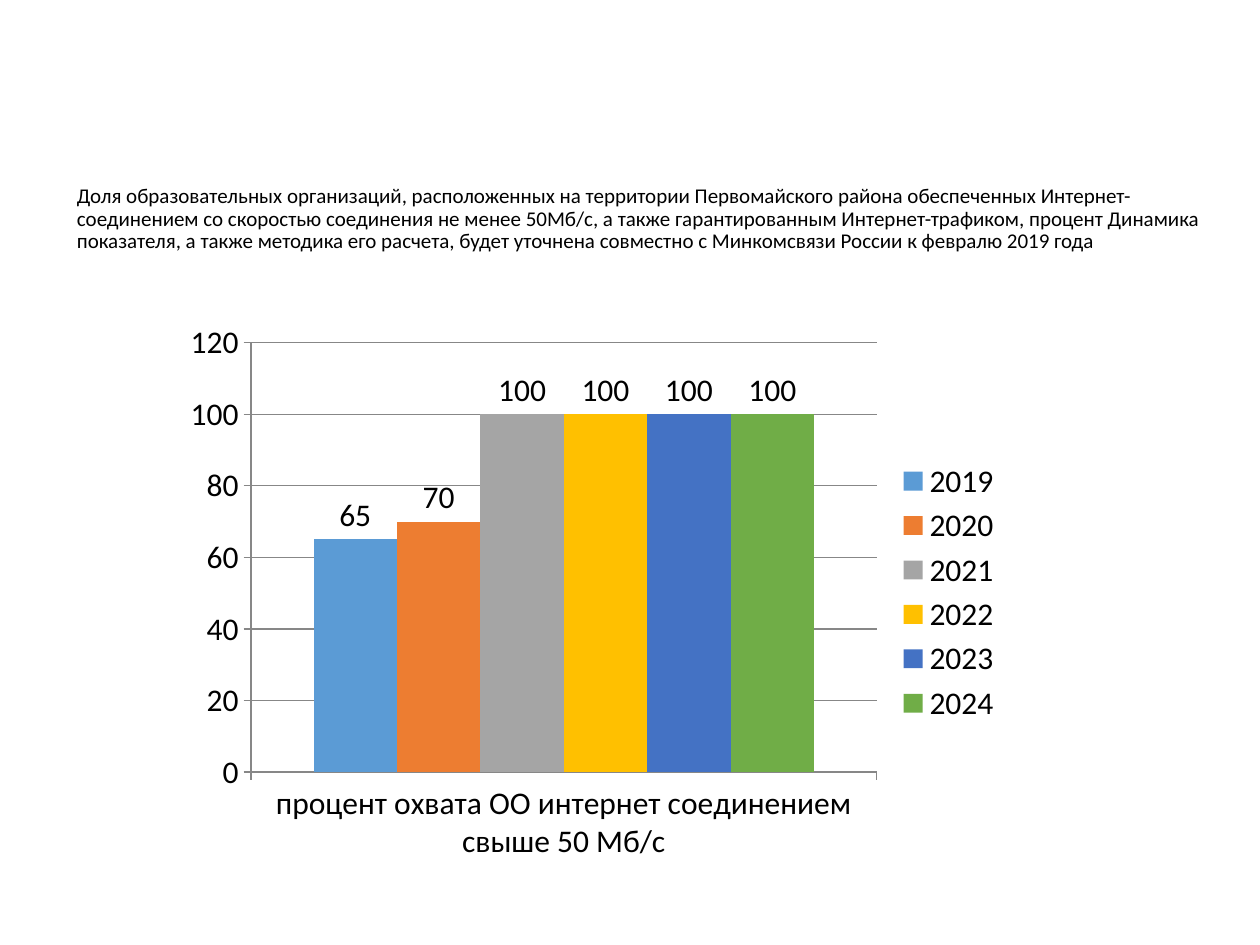
from pptx import Presentation
from pptx.chart.data import CategoryChartData
from pptx.dml.color import RGBColor
from pptx.enum.chart import XL_CHART_TYPE, XL_LABEL_POSITION, XL_LEGEND_POSITION, XL_TICK_MARK
from pptx.enum.text import MSO_ANCHOR, MSO_AUTO_SIZE, PP_ALIGN
from pptx.util import Inches, Pt

COLUMNS = XL_CHART_TYPE.COLUMN_CLUSTERED
OUTSIDE_END = XL_LABEL_POSITION.OUTSIDE_END
LEGEND_RIGHT = XL_LEGEND_POSITION.RIGHT
TICK_OUT = XL_TICK_MARK.OUTSIDE
TOP = MSO_ANCHOR.TOP
NO_FIT = MSO_AUTO_SIZE.NONE
LEFT = PP_ALIGN.LEFT

COLORS = {
    "text": "000000",
    "axis": "878787",
    "2019": "5B9BD5",
    "2020": "ED7D31",
    "2021": "A5A5A5",
    "2022": "FFC000",
    "2023": "4472C4",
    "2024": "70AD47",
}
TITLE = (
    "Доля образовательных организаций, расположенных на территории "
    "Первомайского района обеспеченных Интернет-соединением со скоростью "
    "соединения не менее 50Мб/c, а также гарантированным Интернет-трафиком, "
    "процент Динамика показателя, а также методика его расчета, будет "
    "уточнена совместно с Минкомсвязи России к февралю 2019 года"
)
CATEGORY = "процент охвата ОО интернет соединением свыше 50 Мб/с"
COVERAGE = {"2019": 65, "2020": 70, "2021": 100, "2022": 100, "2023": 100, "2024": 100}


class SlideBuilder:
    def __init__(self, slide, font="Calibri"):
        self.slide = slide
        self.font_name = font

    def color(self, name):
        return RGBColor.from_string(COLORS[name])

    def style_font(self, font, size):
        font.name = self.font_name
        font.size = Pt(size)
        font.bold = False
        font.color.rgb = self.color("text")

    def title(self, text, x, y, w, h, size):
        s = self.slide.shapes.title
        s.left, s.top, s.width, s.height = map(Inches, (x, y, w, h))
        tf = s.text_frame
        tf.text = text
        tf.word_wrap = True
        tf.auto_size = NO_FIT
        tf.vertical_anchor = TOP
        tf.margin_top = Inches(0.1)
        p = tf.paragraphs[0]
        p.alignment = LEFT
        p.line_spacing = 0.9
        self.style_font(p.font, size)

    def column_chart(self, category, values, x, y, w, h, size):
        data = CategoryChartData(number_format="General")
        data.categories = [category]
        for name, value in values.items():
            data.add_series(name, [value])
        frame = self.slide.shapes.add_chart(COLUMNS, *map(Inches, (x, y, w, h)), data)
        chart = frame.chart
        chart.has_title = False
        self.style_font(chart.font, size)
        chart.has_legend = True
        chart.legend.position = LEGEND_RIGHT
        chart.legend.include_in_layout = False

        plot = chart.plots[0]
        plot.gap_width = 150
        plot.overlap = 0
        plot.vary_by_categories = False
        for series in plot.series:
            series.format.fill.solid()
            series.format.fill.fore_color.rgb = self.color(series.name)
            labels = series.data_labels
            labels.show_value = True
            labels.position = OUTSIDE_END
            self.style_font(labels.font, size)

        chart.value_axis.minimum_scale = 0
        chart.value_axis.maximum_scale = 120
        chart.value_axis.major_unit = 20
        chart.value_axis.has_major_gridlines = True
        for axis in (chart.category_axis, chart.value_axis):
            axis.major_tick_mark = TICK_OUT
            self.style_font(axis.tick_labels.font, size)
        for part in (chart.category_axis, chart.value_axis, chart.value_axis.major_gridlines):
            part.format.line.color.rgb = self.color("axis")
            part.format.line.width = Pt(0.75)


def main():
    prs = Presentation()
    prs.slide_width, prs.slide_height = Inches(10), Inches(7.5)
    builder = SlideBuilder(prs.slides.add_slide(prs.slide_layouts[5]))
    builder.title(TITLE, 0.51, 1.37, 9.12, 1.3, size=12)
    builder.column_chart(CATEGORY, COVERAGE, 1.38, 2.48, 6.67, 4.44, size=18)
    prs.save("out.pptx")


if __name__ == "__main__":
    main()
